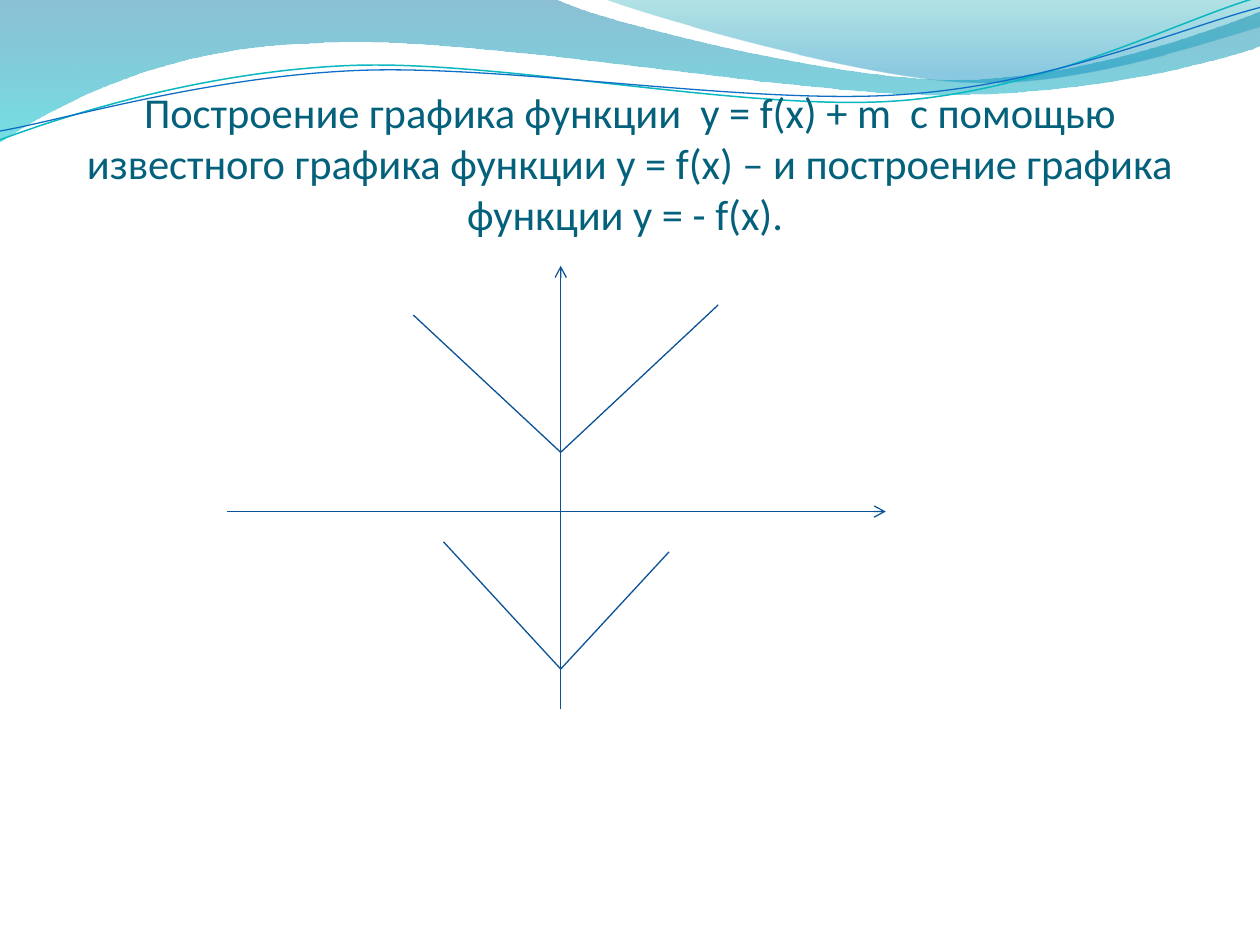
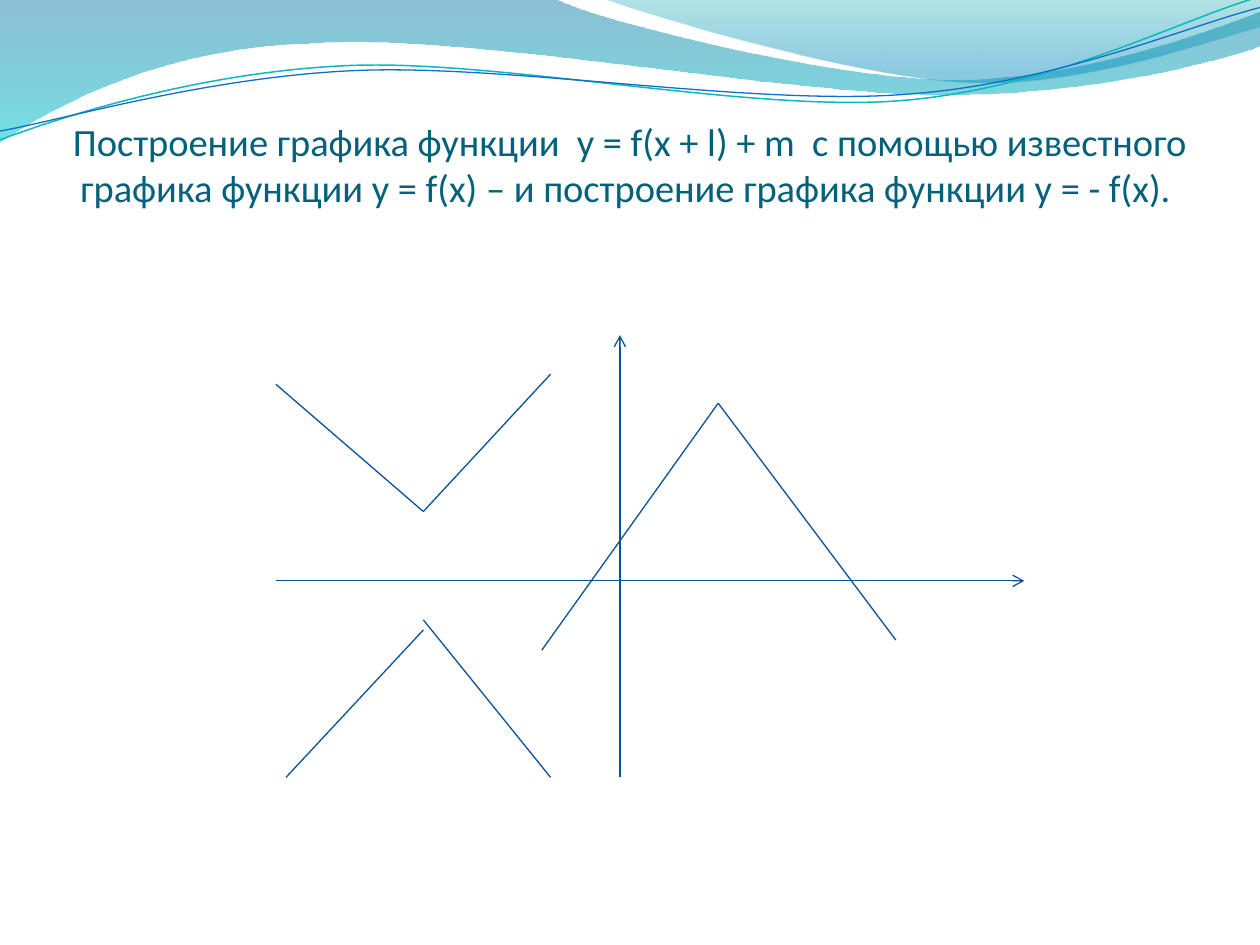
from math import cos, radians, sin

from lxml import etree
from pptx import Presentation
from pptx.dml.color import RGBColor
from pptx.enum.shapes import MSO_CONNECTOR
from pptx.enum.text import MSO_ANCHOR, PP_ALIGN
from pptx.oxml import parse_xml
from pptx.oxml.ns import nsdecls, qn
from pptx.util import Inches, Pt

STRAIGHT = MSO_CONNECTOR.STRAIGHT
BOTTOM = MSO_ANCHOR.BOTTOM
CENTER = PP_ALIGN.CENTER

FONT = "Calibri"
TITLE_COLOR = "04617B"
GRAPH_COLOR = "095295"
GRAPH_WIDTH = 0.75
WAVE_TILT = -2.7

# Waves along the top: a point is a straight step, six numbers are a Bezier step
BANDS = [
    dict(outline=[(0, 0), (4.4, -0.01),
                  (4.76, 0.17, 6.64, 0.63, 7.58, 0.63),
                  (8.53, 0.63, 9.58, 0.26, 10, 0.09),
                  (10.01, 0.36),
                  (9.83, 0.44, 8.7, 0.76, 7.46, 0.75),
                  (6.22, 0.75, 3.82, 0.28, 2.57, 0.34),
                  (1.29, 0.36, 0.46, 0.83, -0.01, 1.13)],
         stops=[(0, "0074A1", 45), (100, "00C6CF", 55)]),
    dict(outline=[(4.79, -0.01),
                  (5.09, 0.11, 6.82, 0.62, 7.69, 0.65),
                  (8.56, 0.69, 9.61, 0.32, 10, 0.21),
                  (10, 0)],
         stops=[(0, "00A1A9", 30), (80, "008BBF", 45)]),
]
WAVE_LINES = [
    dict(outline=[(0, 1.11),
                  (0.48, 0.93, 1.58, 0.57, 2.77, 0.52),
                  (3.95, 0.47, 5.93, 0.89, 7.13, 0.8),
                  (8.33, 0.71, 9.38, 0.15, 9.98, -0.02)],
         center=(4.99, 0.575), color="0AB8BF", width=0.85),
    dict(outline=[(0, 1.04),
                  (0.47, 0.96, 1.64, 0.61, 2.83, 0.56),
                  (4.03, 0.51, 5.97, 0.84, 7.17, 0.75),
                  (8.36, 0.67, 9.41, 0.21, 10, 0.06)],
         center=(5, 0.59), color="0F6FC6", width=0.75),
]

# Each slide: title, axes as (start, end), graph branches as (start, end)
SLIDES = [
    dict(title="Построение графика функции  y = f(x) + m  с помощью известного "
               "графика функции y = f(x) – и построение графика функции y = - f(x). ",
         size=24.3, top=0.7, space_below=0.75,
         axes=[((1.8, 4.06), (7.03, 4.06)), ((4.45, 5.63), (4.45, 2.11))],
         branches=[((3.28, 2.5), (4.45, 3.59)), ((4.45, 3.59), (5.7, 2.42)),
                   ((3.52, 4.3), (4.45, 5.31)), ((4.45, 5.31), (5.31, 4.38))]),
    dict(title="Построение графика функции  y = f(x + l) + m  с помощью известного "
               "графика функции y = f(x) – и построение графика функции y = - f(x). ",
         size=22, top=0.55, space_below=0.83,
         axes=[((2.19, 4.61), (8.13, 4.61)), ((4.92, 6.17), (4.92, 2.66))],
         branches=[((2.19, 3.05), (3.36, 4.06)), ((3.36, 4.06), (4.37, 2.97)),
                   ((3.36, 5), (2.27, 6.17)), ((3.36, 4.92), (4.37, 6.17)),
                   ((5.7, 3.2), (7.11, 5.08)), ((5.7, 3.2), (4.3, 5.16))]),
]


def rgb(color):
    return RGBColor.from_string(color)


def turn(point, center, degrees):
    """Turn a point clockwise about a centre."""
    dx, dy = point[0] - center[0], point[1] - center[1]
    c, s = cos(radians(degrees)), sin(radians(degrees))
    return center[0] + dx * c - dy * s, center[1] + dx * s + dy * c


def points_of(step):
    return list(zip(step[::2], step[1::2]))


def add_outline(slide, outline, closed, center=(0, 0), tilt=0):
    """Draw an outline with true Bezier steps, tilted about its centre."""
    start, *rest = [tuple(map(Inches, turn(point, center, -tilt)))
                    for step in outline for point in points_of(step)]
    builder = slide.shapes.build_freeform(*start)
    builder.add_line_segments(rest, close=closed)
    shape = builder.convert_to_shape()
    # Join each three points of a Bezier step into one curve
    segments = iter(list(shape._element.iter(qn("a:lnTo"))))
    for step in outline[1:]:
        parts = [next(segments) for _ in points_of(step)]
        if len(parts) == 3:
            curve = etree.Element(qn("a:cubicBezTo"))
            parts[0].addprevious(curve)
            for part in parts:
                curve.append(part[0])
                part.getparent().remove(part)
    shape.rotation = tilt
    shape.shadow.inherit = False
    shape.fill.background()
    return shape


def add_band(slide, outline, stops):
    band = add_outline(slide, outline, closed=True)
    band.line.fill.background()
    stop_xml = "".join(
        f'<a:gs pos="{pos * 1000}"><a:srgbClr val="{color}">'
        f'<a:alpha val="{opacity * 1000}"/></a:srgbClr></a:gs>'
        for pos, color, opacity in stops)
    gradient = parse_xml(f'<a:gradFill {nsdecls("a")}><a:gsLst>{stop_xml}</a:gsLst>'
                         '<a:lin ang="5400000" scaled="0"/></a:gradFill>')
    properties = band._element.spPr
    properties.replace(properties.find(qn("a:noFill")), gradient)


def add_wave_line(slide, outline, center, color, width):
    wave = add_outline(slide, outline, closed=False, center=center, tilt=WAVE_TILT)
    wave.line.color.rgb = rgb(color)
    wave.line.width = Pt(width)


def add_text(slide, text, left, top, width, height, *, size, color, space_below=0):
    box = slide.shapes.add_textbox(Inches(left), Inches(top), Inches(width), Inches(height))
    frame = box.text_frame
    frame.word_wrap = True
    frame.vertical_anchor = BOTTOM
    frame.margin_left = frame.margin_right = 0
    frame.margin_top = Inches(0.05)
    frame.margin_bottom = Inches(space_below)
    paragraph = frame.paragraphs[0]
    paragraph.alignment = CENTER
    run = paragraph.add_run()
    run.text = text
    run.font.name = FONT
    run.font.size = Pt(size)
    run.font.color.rgb = rgb(color)


def add_line(slide, start, end, arrow=False):
    line = slide.shapes.add_connector(STRAIGHT, *map(Inches, start + end))
    line.line.color.rgb = rgb(GRAPH_COLOR)
    line.line.width = Pt(GRAPH_WIDTH)
    if arrow:
        etree.SubElement(line.line._get_or_add_ln(), qn("a:tailEnd"), type="arrow")
    etree.SubElement(line._element.spPr, qn("a:effectLst"))


def add_waves(slide):
    for band in BANDS:
        add_band(slide, **band)
    for wave in WAVE_LINES:
        add_wave_line(slide, **wave)


def main():
    deck = Presentation()
    deck.slide_width, deck.slide_height = Inches(10), Inches(7.5)
    for content in SLIDES:
        slide = deck.slides.add_slide(deck.slide_layouts[6])
        add_waves(slide)
        add_text(slide, content["title"], 0.5, content["top"], 9, 1.95,
                 size=content["size"], color=TITLE_COLOR,
                 space_below=content["space_below"])
        # Coordinate axes, then the graphs
        for start, end in content["axes"]:
            add_line(slide, start, end, arrow=True)
        for start, end in content["branches"]:
            add_line(slide, start, end)
    deck.save("out.pptx")


if __name__ == "__main__":
    main()
